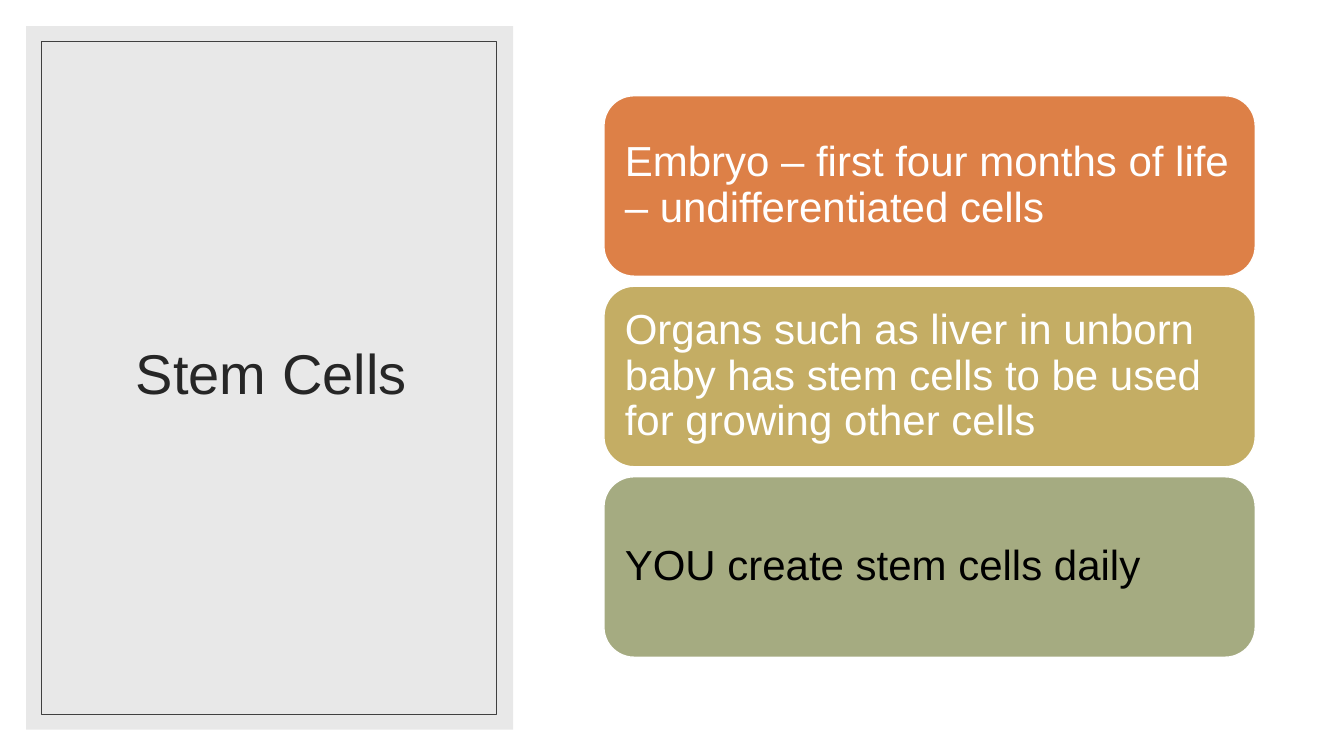
import pptx
import pptx.dml.color
import pptx.enum.shapes
import pptx.enum.text
import pptx.util

Inches = pptx.util.Inches
Pt = pptx.util.Pt
SHAPES = pptx.enum.shapes.MSO_SHAPE
ALIGN = pptx.enum.text.PP_ALIGN

COLORS = {
    "white": "FFFFFF", "black": "000000", "panel": "E8E8E8",
    "frame": "404040", "title": "262626",
    "orange": "DD8047", "gold": "C4AD64", "sage": "A5AB81",
}
TITLE = "Stem Cells"
CARDS = [
    ("Embryo – first four months of life – undifferentiated cells", "orange", "white"),
    ("Organs such as liver in unborn baby has stem cells to be used for growing other cells",
     "gold", "white"),
    ("YOU create stem cells daily", "sage", "black"),
]
CARD_LEFT, CARD_TOP, CARD_WIDTH, CARD_HEIGHT = 5.99, 0.95, 6.46, 1.79
CARD_PITCH = 1.89
CARD_INSET = 0.21


def color(name):
    return pptx.dml.color.RGBColor.from_string(COLORS[name])


def add_box(slide, kind, box, fill=None, line=None, line_width=1):
    shape = slide.shapes.add_shape(kind, *map(Inches, box))
    shape.shadow.inherit = False
    if fill:
        shape.fill.solid()
        shape.fill.fore_color.rgb = color(fill)
    else:
        shape.fill.background()
    if line:
        shape.line.color.rgb = color(line)
        shape.line.width = Pt(line_width)
    else:
        shape.line.fill.background()
    return shape


def write_text(shape, text, size, text_color, alignment):
    frame = shape.text_frame
    frame.word_wrap = True
    frame.vertical_anchor = pptx.enum.text.MSO_ANCHOR.MIDDLE
    paragraph = frame.paragraphs[0]
    paragraph.text = text
    paragraph.alignment = alignment
    paragraph.line_spacing = 0.9
    paragraph.font.name = "Arial"
    paragraph.font.size = Pt(size)
    paragraph.font.color.rgb = color(text_color)


def main():
    presentation = pptx.Presentation()
    presentation.slide_width = Inches(13.33)
    presentation.slide_height = Inches(7.5)
    slide = presentation.slides.add_slide(presentation.slide_layouts[6])

    add_box(slide, SHAPES.RECTANGLE, (0.26, 0.26, 4.83, 6.98), fill="panel")
    title = slide.shapes.add_textbox(*map(Inches, (0.63, 0.61, 4.12, 6.24)))
    write_text(title, TITLE, 40, "title", ALIGN.CENTER)
    add_box(slide, SHAPES.RECTANGLE, (0.41, 0.41, 4.51, 6.68), line="frame", line_width=0.5)

    for index, (text, fill, text_color) in enumerate(CARDS):
        top = CARD_TOP + index * CARD_PITCH
        card = add_box(slide, SHAPES.ROUNDED_RECTANGLE,
                       (CARD_LEFT, top, CARD_WIDTH, CARD_HEIGHT), fill=fill, line="white")
        write_text(card, text, 30, text_color, ALIGN.LEFT)
        # The rounded corners already inset the text area by about 0.09 inches.
        card.text_frame.margin_left = card.text_frame.margin_right = Inches(CARD_INSET - 0.09)

    presentation.save("out.pptx")


if __name__ == "__main__":
    main()
